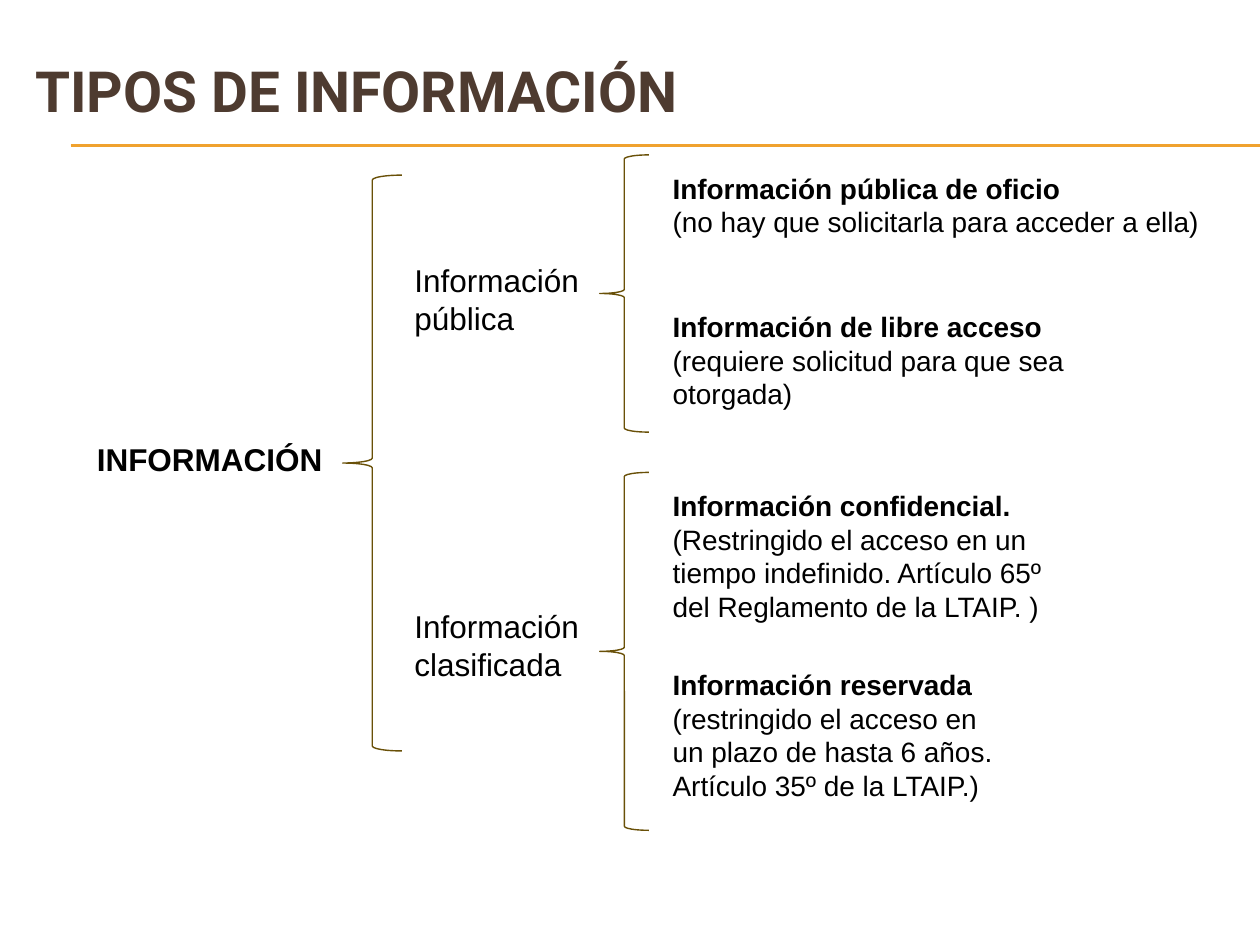
"""Build the slide that classifies types of information with nested braces."""
from dataclasses import dataclass

from lxml.etree import SubElement
from pptx import Presentation
from pptx.dml.color import RGBColor
from pptx.enum.shapes import MSO_CONNECTOR, MSO_SHAPE
from pptx.enum.text import MSO_ANCHOR, MSO_AUTO_SIZE, PP_ALIGN
from pptx.oxml.ns import qn
from pptx.util import Inches, Pt


@dataclass
class Box:
    left: float
    top: float
    width: float
    height: float

    def emu(self):
        return [Inches(v) for v in (self.left, self.top, self.width, self.height)]


@dataclass
class Label:
    box: Box
    paragraphs: list
    size: float = 16


GROUP_X, DETAIL_X = 3.19, 5.24
RULES = [1.15, 1.16]
BRACES = [Box(2.72, 1.39, 0.47, 4.57), Box(4.76, 1.23, 0.39, 2.2), Box(4.76, 3.75, 0.39, 2.84)]
LABELS = [
    Label(Box(0.67, 3.44, 2.05, 0.4), [[("INFORMACIÓN", True)]], 18),
    Label(Box(GROUP_X, 2.02, 1.57, 0.71), [[("Información pública", False)]], 18),
    Label(Box(GROUP_X, 4.77, 1.57, 0.71), [[("Información clasificada", False)]], 18),
    Label(Box(DETAIL_X, 1.31, 4.76, 0.64), [
        [("Información pública de oficio", True)],
        [("(no hay que solicitarla para acceder a ella)", False)]]),
    Label(Box(DETAIL_X, 2.41, 4.25, 0.91), [
        [("Información de libre acceso", True)],
        [("(requiere solicitud para que sea otorgada)", False)]]),
    Label(Box(DETAIL_X, 3.83, 3.23, 1.18), [
        [("Información confidencial. ", True),
         ("(Restringido el acceso en un tiempo indefinido. "
          "Artículo 65º del Reglamento de la LTAIP. )", False)]]),
    Label(Box(DETAIL_X, 5.25, 2.76, 1.18), [
        [("Información reservada", True)],
        [("(restringido el acceso en un plazo de hasta 6 años. "
          "Artículo 35º de la LTAIP.)", False)]]),
]


def rgb(value: str) -> RGBColor:
    return RGBColor.from_string(value)


def add_text(p, text: str, *, size: float, font="Arial", color="000000", bold=False):
    r = p.add_run()
    r.text = text
    r.font.size, r.font.name, r.font.bold = Pt(size), font, bold
    r.font.color.rgb = rgb(color)


def set_title(s, text: str, box: Box):
    sp = s.shapes.title
    sp.left, sp.top, sp.width, sp.height = box.emu()
    tf = sp.text_frame
    tf.auto_size = MSO_AUTO_SIZE.NONE
    tf.vertical_anchor = MSO_ANCHOR.MIDDLE
    tf.margin_top, tf.margin_bottom = Inches(0), Inches(0.5)
    p = tf.paragraphs[0]
    p.alignment = PP_ALIGN.LEFT
    add_text(p, text, size=32.4, font="Roboto", color="4E3B30", bold=True)


def add_rule(s, y: float):
    line = s.shapes.add_connector(
        MSO_CONNECTOR.STRAIGHT, Inches(0.56), Inches(y), Inches(10), Inches(y))
    line.line.color.rgb = rgb("F0A22E")
    line.line.width = Pt(0.75)
    SubElement(line._element.spPr, qn("a:effectLst"))


def add_brace(s, box: Box):
    sp = s.shapes.add_shape(MSO_SHAPE.LEFT_BRACE, *box.emu())
    sp.shadow.inherit = False
    sp.fill.background()
    sp.line.color.rgb = rgb("695008")
    sp.line.width = Pt(0.79)


def add_label(s, label: Label):
    tf = s.shapes.add_textbox(*label.box.emu()).text_frame
    tf.word_wrap = True
    tf.auto_size = MSO_AUTO_SIZE.SHAPE_TO_FIT_TEXT
    for i, runs in enumerate(label.paragraphs):
        p = tf.add_paragraph() if i else tf.paragraphs[0]
        for text, bold in runs:
            add_text(p, text, size=label.size, bold=bold)


def main():
    prs = Presentation()
    prs.slide_width, prs.slide_height = Inches(10), Inches(7.5)
    s = prs.slides.add_slide(prs.slide_layouts[5])
    set_title(s, "TIPOS DE INFORMACIÓN", Box(0.18, 0.5, 9.5, 0.92))
    for y in RULES:
        add_rule(s, y)
    for box in BRACES:
        add_brace(s, box)
    for label in LABELS:
        add_label(s, label)
    prs.save("out.pptx")


if __name__ == "__main__":
    main()
